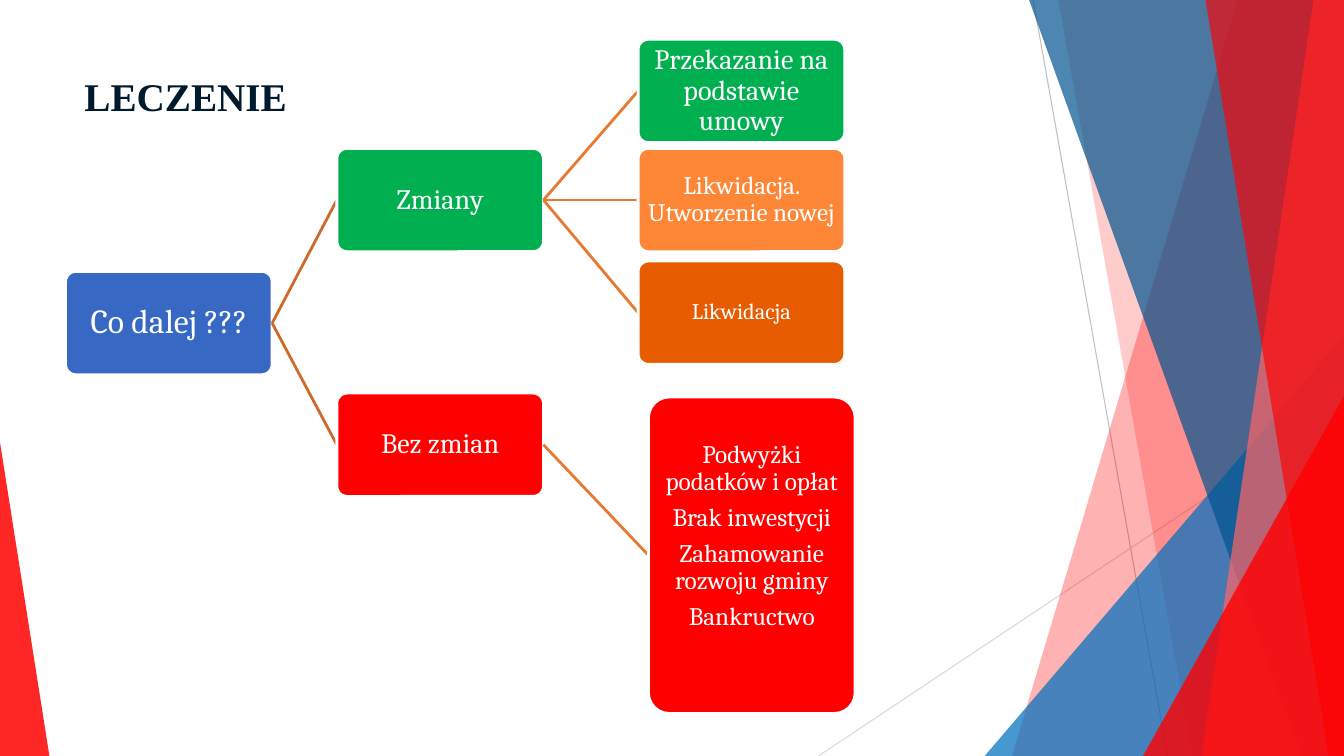
from lxml import etree
from pptx import Presentation
from pptx.dml.color import RGBColor
from pptx.enum.shapes import MSO_CONNECTOR, MSO_SHAPE
from pptx.enum.text import MSO_ANCHOR, PP_ALIGN
from pptx.oxml.ns import qn
from pptx.util import Pt

STRAIGHT = MSO_CONNECTOR.STRAIGHT
ROUNDED, TRIANGLE = MSO_SHAPE.ROUNDED_RECTANGLE, MSO_SHAPE.ISOSCELES_TRIANGLE
TOP, MIDDLE = MSO_ANCHOR.TOP, MSO_ANCHOR.MIDDLE
LEFT, CENTER = PP_ALIGN.LEFT, PP_ALIGN.CENTER
LEFT_SITE, RIGHT_SITE = 1, 3
WIDTH, HEIGHT = 960, 540

COLORS = {
    "white": "FFFFFF", "title": "001A2D", "blue": "3668C4", "green": "00B050",
    "red": "FF0000", "light orange": "FE8637", "dark orange": "E75C01",
    "first link": "CB6B2C", "second link": "E77A32",
    "gray": "BFBFBF", "light gray": "D9D9D9",
    "sky": "0070C0", "navy": "005490", "pink": "FF6666",
}


def color(name):
    return RGBColor.from_string(COLORS[name])


def write_text(shape, text, size, font="Cambria", fill="white", bold=False,
               align=CENTER, anchor=MIDDLE, margins=(3, 3, 3, 3), spacing=0.9):
    frame = shape.text_frame
    frame.word_wrap = True
    frame.vertical_anchor = anchor
    frame.margin_left, frame.margin_top, frame.margin_right, frame.margin_bottom = map(Pt, margins)
    frame.text = text
    for index, paragraph in enumerate(frame.paragraphs):
        paragraph.alignment = align
        paragraph.line_spacing = spacing
        paragraph.space_before = Pt(6.3 if index else 0)
        paragraph.font.size = Pt(size)
        paragraph.font.name = font
        paragraph.font.bold = bold
        paragraph.font.color.rgb = color(fill)


presentation = Presentation()
presentation.slide_width, presentation.slide_height = Pt(WIDTH), Pt(HEIGHT)
slide = presentation.slides.add_slide(presentation.slide_layouts[6])
shapes = slide.shapes

# Thin background lines
for start_x, start_y, end_x, end_y, name in [
    (738, 0, 834, HEIGHT, "gray"),
    (WIDTH, 290, 584.6, HEIGHT, "light gray"),
]:
    line = shapes.add_connector(STRAIGHT, Pt(start_x), Pt(start_y), Pt(end_x), Pt(end_y))
    line.line.color.rgb = color(name)
    line.line.width = Pt(0.75)

# Translucent background: bands (top x, bottom x) reach the right edge,
# triangles (left, top, width, apex) stand on the bottom edge
for geometry, name, opacity in [
    ((884.2, 722.9), "red", 30),
    ((756, 851.8), "red", 20),
    ((703.4, 239.8, 256.6, 1), "sky", 72),
    ((735.1, 929.5), "navy", 70),
    ((938.2, 858.2), "pink", 70),
    ((861.1, 949), "red", 65),
    ((816.5, 283, 143.5, 1), "red", 80),
    ((0, 316.1, 35.3, 0), "red", 85),
]:
    if len(geometry) == 2:
        top_x, bottom_x = geometry
        builder = shapes.build_freeform(Pt(top_x), 0)
        builder.add_line_segments([(Pt(WIDTH), 0), (Pt(WIDTH), Pt(HEIGHT)), (Pt(bottom_x), Pt(HEIGHT))])
        facet = builder.convert_to_shape()
    else:
        left, top, width, apex = geometry
        facet = shapes.add_shape(TRIANGLE, Pt(left), Pt(top), Pt(width), Pt(HEIGHT - top))
        facet.adjustments[0] = apex
    facet.shadow.inherit = False
    facet.line.fill.background()
    facet.fill.solid()
    facet.fill.fore_color.rgb = color(name)
    rgb = facet.fill._xPr.find(qn("a:solidFill"))[0]
    etree.SubElement(rgb, qn("a:alpha"), val=str(opacity * 1000))

# Title
title = shapes.add_textbox(Pt(53.3), Pt(48.2), Pt(676.8), Pt(103.7))
write_text(title, "LECZENIE", 28, font="Times New Roman", fill="title", bold=True,
           align=LEFT, anchor=TOP, margins=(7.2, 3.6, 7.2, 3.6), spacing=1)

# Decision tree: text, parent, left, top, height, colour, text size, bottom margin
BOX_WIDTH, BOX_HEIGHT = 147.6, 73.8
outcomes = "Podwyżki podatków i opłat\nBrak inwestycji\nZahamowanie rozwoju gminy\nBankructwo"
boxes = {}
for text, parent, left, top, height, name, size, bottom_margin in [
    ("Co dalej ???", None, 46.8, 193.9, BOX_HEIGHT, "blue", 24, 3),
    ("Zmiany", "Co dalej ???", 240.6, 106, BOX_HEIGHT, "green", 20, 3),
    ("Przekazanie na podstawie umowy", "Zmiany", 455.8, 28.1, BOX_HEIGHT, "green", 20, 3),
    ("Likwidacja. Utworzenie nowej", "Zmiany", 455.8, 106, BOX_HEIGHT, "light orange", 18, 3),
    ("Likwidacja", "Zmiany", 455.8, 186.5, BOX_HEIGHT, "dark orange", 16, 3),
    ("Bez zmian", "Co dalej ???", 240.6, 280.8, BOX_HEIGHT, "red", 20, 3),
    (outcomes, "Bez zmian", 463.2, 283.6, 226, "red", 18, 30),
]:
    if parent:
        link = shapes.add_connector(STRAIGHT, 0, 0, 0, 0)
        link.line.color.rgb = color("first link" if parent == "Co dalej ???" else "second link")
        link.line.width = Pt(2)
    box = shapes.add_shape(ROUNDED, Pt(left), Pt(top), Pt(BOX_WIDTH), Pt(height))
    box.adjustments[0] = 0.1
    box.shadow.inherit = False
    box.fill.solid()
    box.fill.fore_color.rgb = color(name)
    box.line.color.rgb = color("white")
    box.line.width = Pt(2)
    write_text(box, text, size, margins=(3, 3, 3, bottom_margin))
    boxes[text] = box
    if parent:
        link.begin_connect(boxes[parent], RIGHT_SITE)
        link.end_connect(box, LEFT_SITE)

# Connectors without shadow
for connector in slide.element.iter(qn("p:cxnSp")):
    etree.SubElement(connector.spPr, qn("a:effectLst"))

presentation.save("out.pptx")
